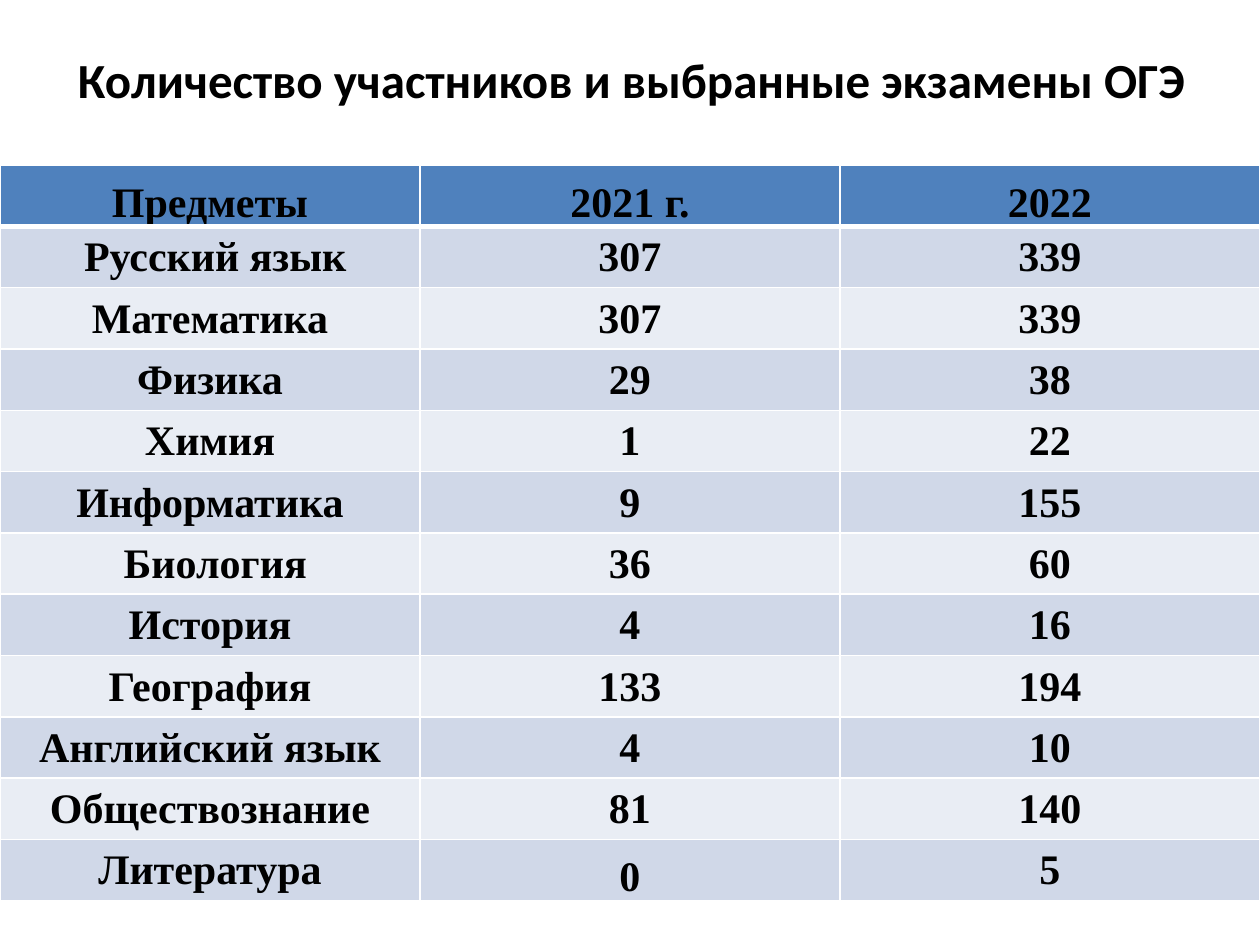
from dataclasses import dataclass

from lxml import etree
from pptx import Presentation
from pptx.dml.color import RGBColor
from pptx.enum.text import MSO_ANCHOR, PP_ALIGN
from pptx.oxml.ns import qn
from pptx.util import Inches, Pt

CENTER = PP_ALIGN.CENTER
MIDDLE, BOTTOM = MSO_ANCHOR.MIDDLE, MSO_ANCHOR.BOTTOM


@dataclass(frozen=True)
class Theme:
    text: str = "000000"
    header: str = "4F81BD"
    bands: tuple = ("D0D8E8", "E9EDF4")
    border: str = "FFFFFF"
    title_font: str = "Calibri"
    table_font: str = "Times New Roman"
    title_size: int = 28
    table_size: int = 24
    border_width: int = 1
    header_rule: int = 3


THEME = Theme()

TITLE = "Количество участников и выбранные экзамены ОГЭ"
HEADER = ("Предметы", "2021 г.", "2022")
SUBJECTS = [
    (" Русский язык", 307, 339),
    ("Математика", 307, 339),
    ("Физика", 29, 38),
    ("Химия", 1, 22),
    ("Информатика", 9, 155),
    (" Биология", 36, 60),
    ("История", 4, 16),
    ("География", 133, 194),
    ("Английский язык", 4, 10),
    ("Обществознание", 81, 140),
    ("Литература", 0, 5),
]


def write_text(frame, text, *, font, size, bold=True, color=THEME.text, align=CENTER):
    para = frame.paragraphs[0]
    para.alignment = align
    span = para.add_run()
    span.text = text
    span.font.name = font
    span.font.size = Pt(size)
    span.font.bold = bold
    span.font.color.rgb = RGBColor.from_string(color)


def set_borders(cell, *, top, bottom):
    properties = cell._tc.get_or_add_tcPr()
    widths = {"lnL": THEME.border_width, "lnR": THEME.border_width,
              "lnT": top, "lnB": bottom}
    for side, width in widths.items():
        line = etree.SubElement(properties, qn(f"a:{side}"), w=str(Pt(width)))
        fill = etree.SubElement(line, qn("a:solidFill"))
        etree.SubElement(fill, qn("a:srgbClr"), val=THEME.border)


def add_title(page, left, top, width, height):
    box = page.shapes.add_textbox(left, top, width, height)
    frame = box.text_frame
    frame.word_wrap = True
    frame.vertical_anchor = MIDDLE
    frame.margin_left = frame.margin_right = 0
    write_text(frame, TITLE, font=THEME.title_font, size=THEME.title_size)


def format_cell(cell, text, *, fill, anchor, top, bottom):
    cell.margin_left = cell.margin_right = cell.margin_top = Inches(0.01)
    cell.margin_bottom = 0
    cell.vertical_anchor = anchor
    set_borders(cell, top=top, bottom=bottom)
    cell.fill.solid()
    cell.fill.fore_color.rgb = RGBColor.from_string(fill)
    write_text(cell.text_frame, text, font=THEME.table_font, size=THEME.table_size)


def add_exam_table(page, left, top, width, height):
    rows = [HEADER, *SUBJECTS]
    table = page.shapes.add_table(
        len(rows), len(HEADER), left, top, width, height).table
    for row_index, values in enumerate(rows):
        is_header = row_index == 0
        fill = THEME.header if is_header else THEME.bands[(row_index - 1) % 2]
        upper = THEME.header_rule if row_index == 1 else THEME.border_width
        lower = THEME.header_rule if is_header else THEME.border_width
        for column_index, value in enumerate(values):
            # The header and the single zero sit on the cell floor
            anchor = BOTTOM if is_header or value == 0 else MIDDLE
            format_cell(table.cell(row_index, column_index), str(value),
                        fill=fill, anchor=anchor, top=upper, bottom=lower)


def main():
    deck = Presentation()
    deck.slide_width, deck.slide_height = Inches(10), Inches(7.5)
    page = deck.slides.add_slide(deck.slide_layouts[6])

    # Title above a full-width table
    add_title(page, Inches(0.51), Inches(0), Inches(9), Inches(1.25))
    add_exam_table(page, Inches(0), Inches(1.31), Inches(10), Inches(5.84))

    deck.save("out.pptx")


if __name__ == "__main__":
    main()
